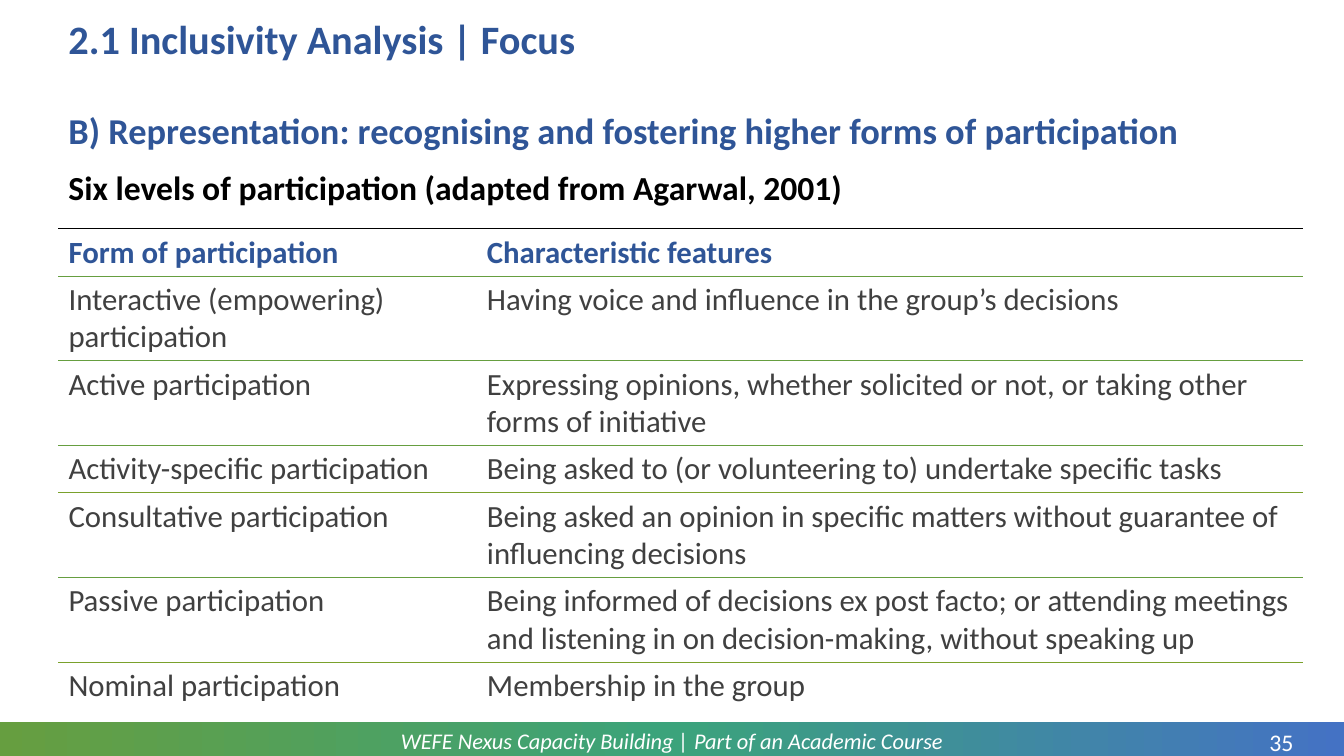
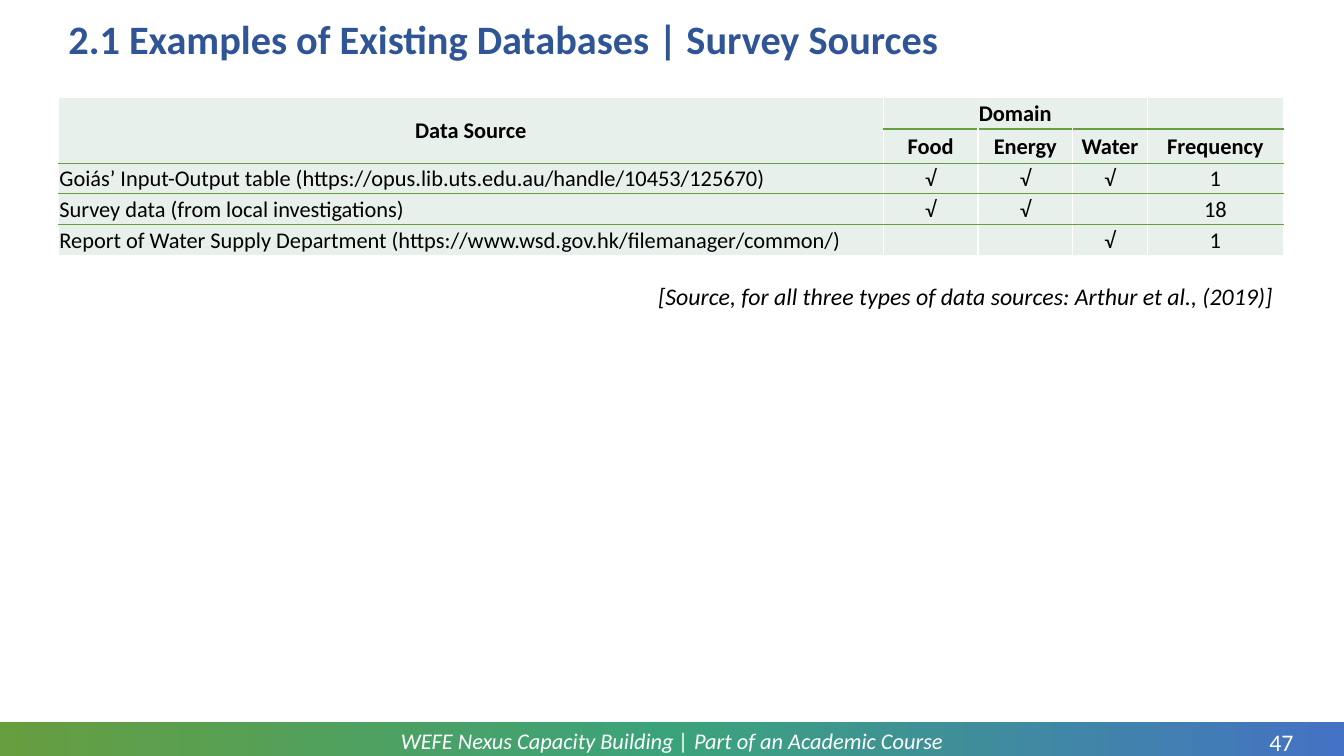
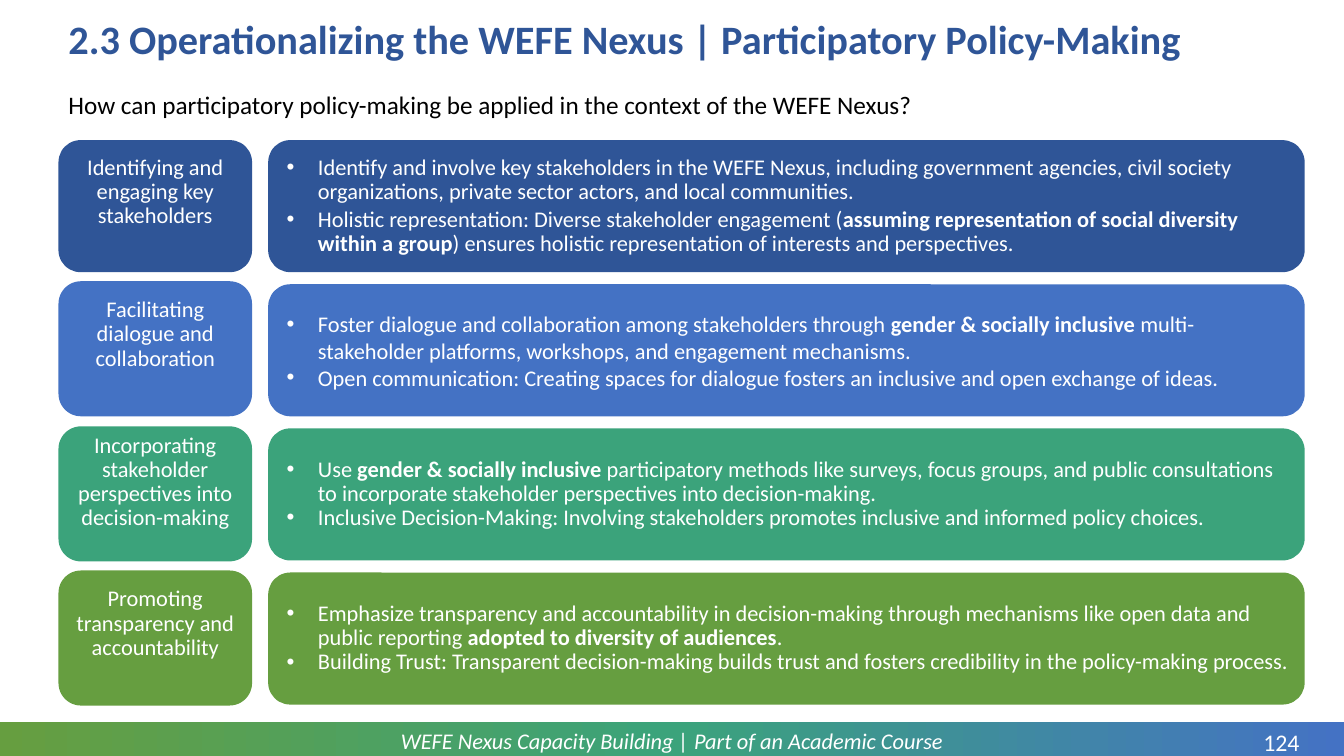
import copy
import dataclasses

import lxml.etree
import pptx
import pptx.dml.color
import pptx.enum.shapes
import pptx.enum.text
import pptx.oxml.ns
import pptx.util

EMU_PER_PX = 9144  # 100 px to the inch
SLIDE_W, SLIDE_H = 1333, 750
LEFT = 58

ALIGN = pptx.enum.text.PP_ALIGN
ANCHOR = pptx.enum.text.MSO_ANCHOR
SHAPE = pptx.enum.shapes.MSO_SHAPE
qn = pptx.oxml.ns.qn


@dataclasses.dataclass(frozen=True)
class Theme:
    font: str = "Calibri"
    # colours
    navy: str = "2F5597"
    blue: str = "4472C4"
    teal: str = "3BA37B"
    green: str = "669E40"
    lime: str = "7AA12C"
    mist: str = "E8F0EC"
    grey: str = "404040"
    black: str = "000000"
    white: str = "FFFFFF"
    # type sizes
    title: float = 28.8
    heading: int = 26
    subheading: int = 24
    large: int = 22
    question: int = 18
    note: int = 17
    body: int = 16


THEME = Theme()


# ---- Helpers ----
def px(length):
    return pptx.util.Emu(length * EMU_PER_PX)


def rgb(colour):
    return pptx.dml.color.RGBColor.from_string(colour)


def add_bullet(paragraph, indent):
    props = paragraph._p.get_or_add_pPr()
    props.set("marL", str(px(indent)))
    props.set("indent", str(px(-indent)))
    lxml.etree.SubElement(props, qn("a:buFont")).set("typeface", "Arial")
    lxml.etree.SubElement(props, qn("a:buChar")).set("char", "•")


def write_text(frame, text, *, size, colour, bold=False, italic=False,
               align=ALIGN.LEFT, anchor=ANCHOR.TOP, margins=(10, 5, 10, 5),
               line_spacing=None, space_after=None, bullet_indent=None):
    """Write one paragraph per line of text; *asterisks* enclose bold words."""
    frame.word_wrap = True
    frame.vertical_anchor = anchor
    (frame.margin_left, frame.margin_top,
     frame.margin_right, frame.margin_bottom) = map(px, margins)
    for number, line in enumerate(text.split("\n")):
        paragraph = frame.add_paragraph() if number else frame.paragraphs[0]
        paragraph.alignment = align
        if line_spacing:
            paragraph.line_spacing = line_spacing
        if space_after:
            paragraph.space_after = pptx.util.Pt(space_after)
        if bullet_indent:
            add_bullet(paragraph, bullet_indent)
        for part, words in enumerate(line.split("*")):
            run = paragraph.add_run()
            run.text = words
            run.font.name = THEME.font
            run.font.size = pptx.util.Pt(size)
            run.font.bold = bold or part % 2 == 1
            run.font.italic = italic
            run.font.color.rgb = rgb(colour)


def add_text(slide, box, text, **style):
    label = slide.shapes.add_textbox(*map(px, box))
    write_text(label.text_frame, text, **style)


def add_panel(slide, preset, box, colour=None):
    panel = slide.shapes.add_shape(preset, *map(px, box))
    panel.shadow.inherit = False
    panel.line.fill.background()
    if colour:
        panel.fill.solid()
        panel.fill.fore_color.rgb = rgb(colour)
    return panel


def add_plain_table(slide, left, top, widths, heights):
    table = slide.shapes.add_table(
        len(heights), len(widths), px(left), px(top),
        px(sum(widths)), px(sum(heights))).table
    table.first_row = table.horz_banding = False
    style = table._tbl.tblPr.find(qn("a:tableStyleId"))
    style.text = "{2D5ABB26-0587-4C30-8999-92F81FD0307C}"  # no style, no grid
    for column, width in zip(table.columns, widths):
        column.width = px(width)
    for row, height in zip(table.rows, heights):
        row.height = px(height)
    return table


def paint_cell(cell, fill=None, **borders):
    """Borders are colours by side: L, R, T, B."""
    props = cell._tc.get_or_add_tcPr()
    for side in "LRTB":
        if borders.get(side):
            line = lxml.etree.SubElement(props, qn("a:ln" + side))
            line.set("w", str(pptx.util.Pt(1)))
            solid = lxml.etree.SubElement(line, qn("a:solidFill"))
            lxml.etree.SubElement(solid, qn("a:srgbClr")).set("val", borders[side])
    if fill:
        cell.fill.solid()
        cell.fill.fore_color.rgb = rgb(fill)
    else:
        cell.fill.background()


# ---- Shared frame of every slide ----
def add_footer(slide, number):
    band = add_panel(slide, SHAPE.RECTANGLE, (0, 716, SLIDE_W, SLIDE_H - 716))
    band.fill.gradient()
    band.fill.gradient_angle = 0
    stops = band._element.spPr.find(".//" + qn("a:gsLst"))
    stops.insert(1, copy.deepcopy(stops[0]))
    colours = (THEME.green, THEME.teal, THEME.blue)
    for step, (stop, colour) in enumerate(zip(band.fill.gradient_stops, colours)):
        stop.color.rgb = rgb(colour)
        stop.position = step / 2
    add_text(slide, (92, 717, 1149, 36),
             "WEFE Nexus Capacity Building | Part of an Academic Course",
             size=THEME.body, colour=THEME.white, italic=True,
             align=ALIGN.CENTER, anchor=ANCHOR.MIDDLE)
    add_text(slide, (1241, 722, 60, 29), str(number), size=THEME.note,
             colour=THEME.white, align=ALIGN.CENTER, margins=(0, 0, 0, 0))


def start_slide(deck, title, number):
    slide = deck.slides.add_slide(deck.slide_layouts[6])
    add_footer(slide, number)
    add_text(slide, (LEFT, 13, 1215, 56), title, size=THEME.title,
             colour=THEME.navy, bold=True, anchor=ANCHOR.MIDDLE, line_spacing=0.9)
    return slide


# ---- Slide: levels of participation ----
PARTICIPATION = [
    ("Form of participation", "Characteristic features"),
    ("Interactive (empowering) participation",
     "Having voice and influence in the group’s decisions"),
    ("Active participation",
     "Expressing opinions, whether solicited or not, or taking other forms of initiative"),
    ("Activity-specific participation",
     "Being asked to (or volunteering to) undertake specific tasks"),
    ("Consultative participation",
     "Being asked an opinion in specific matters without guarantee of influencing decisions"),
    ("Passive participation",
     "Being informed of decisions ex post facto; or attending meetings and listening in "
     "on decision-making, without speaking up"),
    ("Nominal participation", "Membership in the group"),
]


def build_participation(deck):
    slide = start_slide(deck, "2.1 Inclusivity Analysis | Focus", 35)
    add_text(slide, (LEFT, 102, 1198, 59),
             "B) Representation: recognising and fostering higher forms of participation",
             size=THEME.heading, colour=THEME.navy, bold=True,
             anchor=ANCHOR.MIDDLE, line_spacing=0.9)
    add_text(slide, (LEFT, 161, 879, 50),
             "Six levels of participation (adapted from Agarwal, 2001)",
             size=THEME.subheading, colour=THEME.black, bold=True)

    one_line, two_lines = 47, 84
    heights = [one_line, two_lines, two_lines, one_line,
               two_lines, two_lines, one_line]
    rules = [THEME.black, THEME.green, THEME.green, THEME.green,
             THEME.lime, THEME.green, THEME.lime, None]
    levels = add_plain_table(slide, LEFT, 227, [415, 819], heights)
    for row, texts in enumerate(PARTICIPATION):
        header = row == 0
        for column, text in enumerate(texts):
            cell = levels.cell(row, column)
            paint_cell(cell, T=rules[row], B=rules[row + 1])
            write_text(cell.text_frame, text, size=THEME.large, bold=header,
                       colour=THEME.navy if header else THEME.grey)
            cell.vertical_anchor = ANCHOR.MIDDLE if header else ANCHOR.TOP


# ---- Slide: survey sources ----
SOURCES = [
    ("Data Source", "Domain", "", "", ""),
    ("", "Food", "Energy", "Water", "Frequency"),
    ("Goiás’ Input-Output table (https://opus.lib.uts.edu.au/handle/10453/125670)",
     "√", "√", "√", "1"),
    ("Survey data (from local investigations)", "√", "√", "", "18"),
    ("Report of Water Supply Department (https://www.wsd.gov.hk/filemanager/common/)",
     "", "", "√", "1"),
]


def build_sources(deck):
    slide = start_slide(deck, "2.1 Examples of Existing Databases | Survey Sources", 47)
    sources = add_plain_table(slide, LEFT, 97, [818, 94, 94, 74, 135],
                              [28, 34, 30, 30, 30])
    sources.cell(0, 0).merge(sources.cell(1, 0))
    sources.cell(0, 1).merge(sources.cell(0, 3))
    rules = [THEME.white] + [THEME.green] * 4 + [THEME.white]
    for row, texts in enumerate(SOURCES):
        header = row < 2
        for column, text in enumerate(texts):
            cell = sources.cell(row, column)
            if cell.is_spanned:
                continue
            paint_cell(cell, THEME.mist, L=THEME.white, R=THEME.white,
                       T=rules[row], B=rules[row + 1])
            write_text(cell.text_frame, text, size=THEME.body,
                       colour=THEME.black, bold=header,
                       align=ALIGN.CENTER if header or column else ALIGN.LEFT)
            cell.vertical_anchor = ANCHOR.MIDDLE
            cell.margin_left = cell.margin_top = cell.margin_right = px(1)
            cell.margin_bottom = 0
    add_text(slide, (43, 275, 1230, 39),
             "[Source, for all three types of data sources: Arthur et al., (2019)]",
             size=THEME.note, colour=THEME.black, italic=True, align=ALIGN.RIGHT)


# ---- Slide: participatory policy-making ----
@dataclasses.dataclass(frozen=True)
class Step:
    label: str
    actions: str
    colour: str
    label_top: int
    label_height: int = 134
    label_anchor: ANCHOR = ANCHOR.MIDDLE
    line_spacing: float = 0.9
    space_after: float = 0


STEPS = [
    Step("Identifying and engaging key stakeholders",
         "Identify and involve key stakeholders in the WEFE Nexus, including government "
         "agencies, civil society organizations, private sector actors, and local "
         "communities.\n"
         "Holistic representation: Diverse stakeholder engagement (*assuming "
         "representation of social diversity within a group*) ensures holistic "
         "representation of interests and perspectives.",
         THEME.navy, 139, label_height=131, space_after=2.4),
    Step("Facilitating dialogue and collaboration",
         "Foster dialogue and collaboration among stakeholders through *gender & socially "
         "inclusive* multi-stakeholder platforms, workshops, and engagement mechanisms.\n"
         "Open communication: Creating spaces for dialogue fosters an inclusive and open "
         "exchange of ideas.",
         THEME.blue, 279, line_spacing=1.0),
    Step("Incorporating stakeholder perspectives into decision-making",
         "Use *gender & socially inclusive* participatory methods like surveys, focus "
         "groups, and public consultations to incorporate stakeholder perspectives into "
         "decision-making.\n"
         "Inclusive Decision-Making: Involving stakeholders promotes inclusive and "
         "informed policy choices.",
         THEME.teal, 423, label_anchor=ANCHOR.TOP),
    Step("Promoting transparency and accountability",
         "Emphasize transparency and accountability in decision-making through mechanisms "
         "like open data and public reporting *adopted to diversity of audiences*.\n"
         "Building Trust: Transparent decision-making builds trust and fosters "
         "credibility in the policy-making process.",
         THEME.green, 566),
]


def build_policy_making(deck):
    slide = start_slide(
        deck, "2.3 Operationalizing the WEFE Nexus | Participatory Policy-Making", 124)
    add_text(slide, (LEFT, 84, 1212, 40),
             "How can participatory policy-making be applied in the context of the "
             "WEFE Nexus?",
             size=THEME.question, colour=THEME.black, align=ALIGN.JUSTIFY)
    first_top, pitch = 139, 143
    for number, step in enumerate(STEPS):
        label = add_panel(slide, SHAPE.ROUNDED_RECTANGLE,
                          (LEFT, step.label_top, 192, step.label_height), step.colour)
        write_text(label.text_frame, step.label, size=THEME.body,
                   colour=THEME.white, align=ALIGN.CENTER, anchor=step.label_anchor,
                   margins=(1, 1, 1, 29), line_spacing=0.9, space_after=5.6)
        actions = add_panel(slide, SHAPE.ROUNDED_RECTANGLE,
                            (266, first_top + number * pitch, 1028, 131), step.colour)
        write_text(actions.text_frame, step.actions, size=THEME.body,
                   colour=THEME.white, anchor=ANCHOR.MIDDLE, margins=(12, 6, 6, 6),
                   line_spacing=step.line_spacing, space_after=step.space_after,
                   bullet_indent=31)


def main():
    deck = pptx.Presentation()
    deck.slide_width, deck.slide_height = px(SLIDE_W), px(SLIDE_H)
    build_participation(deck)
    build_sources(deck)
    build_policy_making(deck)
    deck.save("out.pptx")


if __name__ == "__main__":
    main()
